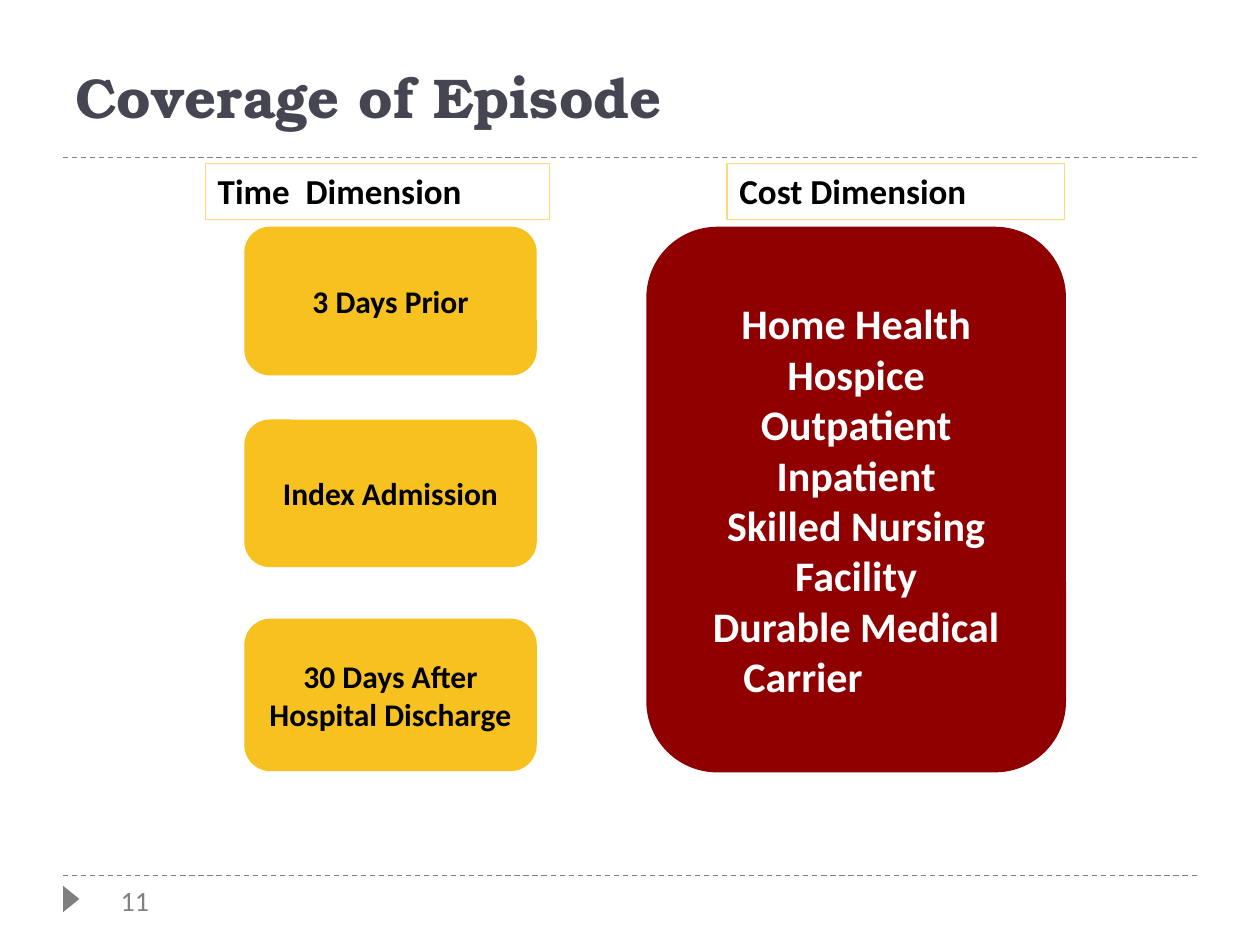
from lxml.etree import SubElement
from pptx import Presentation
from pptx.dml.color import RGBColor
from pptx.enum.dml import MSO_LINE
from pptx.enum.shapes import MSO_CONNECTOR, MSO_SHAPE
from pptx.enum.text import MSO_ANCHOR, PP_ALIGN
from pptx.oxml.ns import qn
from pptx.util import Inches, Pt

HUES = {
    "ink": "000000", "white": "FFFFFF", "title": "464653", "page": "808080",
    "rule": "7F7F7F", "gold": "F7C120", "pale": "FADA7A",
    "red": "900000", "edge": "8E0000",
}
HUES = {name: RGBColor.from_string(code) for name, code in HUES.items()}

deck = Presentation()
deck.slide_width, deck.slide_height = Inches(10), Inches(7.5)
slide = deck.slides.add_slide(deck.slide_layouts[6])
shapes = slide.shapes
# The slide is a grid of 100 columns by 75 rows
COL, ROW = deck.slide_width / 100, deck.slide_height / 75


def place(x, y, w, h, kind=None, fill=None, line=None, width=1.5):
    """Add a preset shape, or a text box when no kind is given."""
    area = [round(n) for n in (x * COL, y * ROW, w * COL, h * ROW)]
    if kind is None:
        return shapes.add_textbox(*area)
    shape = shapes.add_shape(kind, *area)
    shape.shadow.inherit = False
    if fill:
        shape.fill.solid()
        shape.fill.fore_color.rgb = HUES[fill]
    else:
        shape.fill.background()
    if line:
        shape.line.color.rgb = HUES[line]
        shape.line.width = Pt(width)
    else:
        shape.line.fill.background()
    return shape


def write(shape, *lines, size=18, hue="ink", font="Calibri", bold=True,
          align=PP_ALIGN.CENTER, anchor=MSO_ANCHOR.MIDDLE, wrap=True):
    frame = shape.text_frame
    frame.word_wrap = wrap
    frame.vertical_anchor = anchor
    frame.text = "\n".join(lines)
    for para in frame.paragraphs:
        para.alignment = align
        para.font.name = font
        para.font.size = Pt(size)
        para.font.bold = bold
        para.font.color.rgb = HUES[hue]


# Dashed rules above and below the body
for y in (69.5, 12.5):
    rule = shapes.add_connector(
        MSO_CONNECTOR.STRAIGHT, round(5 * COL), round(y * ROW),
        round(95 * COL), round(y * ROW))
    rule.line.color.rgb = HUES["rule"]
    rule.line.width = Pt(0.75)
    rule.line.dash_style = MSO_LINE.DASH
    SubElement(rule._element.spPr, qn("a:effectLst"))

# Page number and its marker
mark = place(4.6, 70.7, 2.1, 1.3, MSO_SHAPE.ISOSCELES_TRIANGLE, "rule")
mark.rotation = 90
write(place(8.6, 69.6, 4.7, 3.7), "11", size=16, hue="page", bold=False,
      align=PP_ALIGN.LEFT, anchor=MSO_ANCHOR.TOP, wrap=False)

write(place(5, 0, 90, 10.8), "Coverage of Episode", size=32, hue="title",
      font="TeX Gyre Bonum", align=PP_ALIGN.LEFT, anchor=MSO_ANCHOR.BOTTOM)

# Time: three steps
steps = [
    (18.1, 11.6, "3 Days Prior"),
    (33.4, 11.5, "Index Admission"),
    (49.2, 11.9, "30 Days After Hospital Discharge"),
]
for y, h, text in steps:
    write(place(19.5, y, 23, h, MSO_SHAPE.ROUNDED_RECTANGLE, "gold", "gold"),
          text)

# Cost: one panel of services
costs = place(51.4, 18.1, 33.1, 43.1, MSO_SHAPE.ROUNDED_RECTANGLE,
              "red", "edge")
write(costs, "Home Health", "Hospice", "Outpatient", "Inpatient",
      "Skilled Nursing Facility", "Durable Medical", "Carrier",
      size=24, hue="white")
last = costs.text_frame.paragraphs[-1]
last.alignment = PP_ALIGN.LEFT
last._p.get_or_add_pPr().set("marL", str(Inches(0.5)))

# Column heads
for x, w, text in ((16.3, 27.3, "Time  Dimension"),
                   (57.7, 26.8, "Cost Dimension")):
    write(place(x, 13, w, 4.4, MSO_SHAPE.RECTANGLE, line="pale", width=0.75),
          text, size=20, align=PP_ALIGN.LEFT, anchor=MSO_ANCHOR.TOP)

deck.save("out.pptx")
